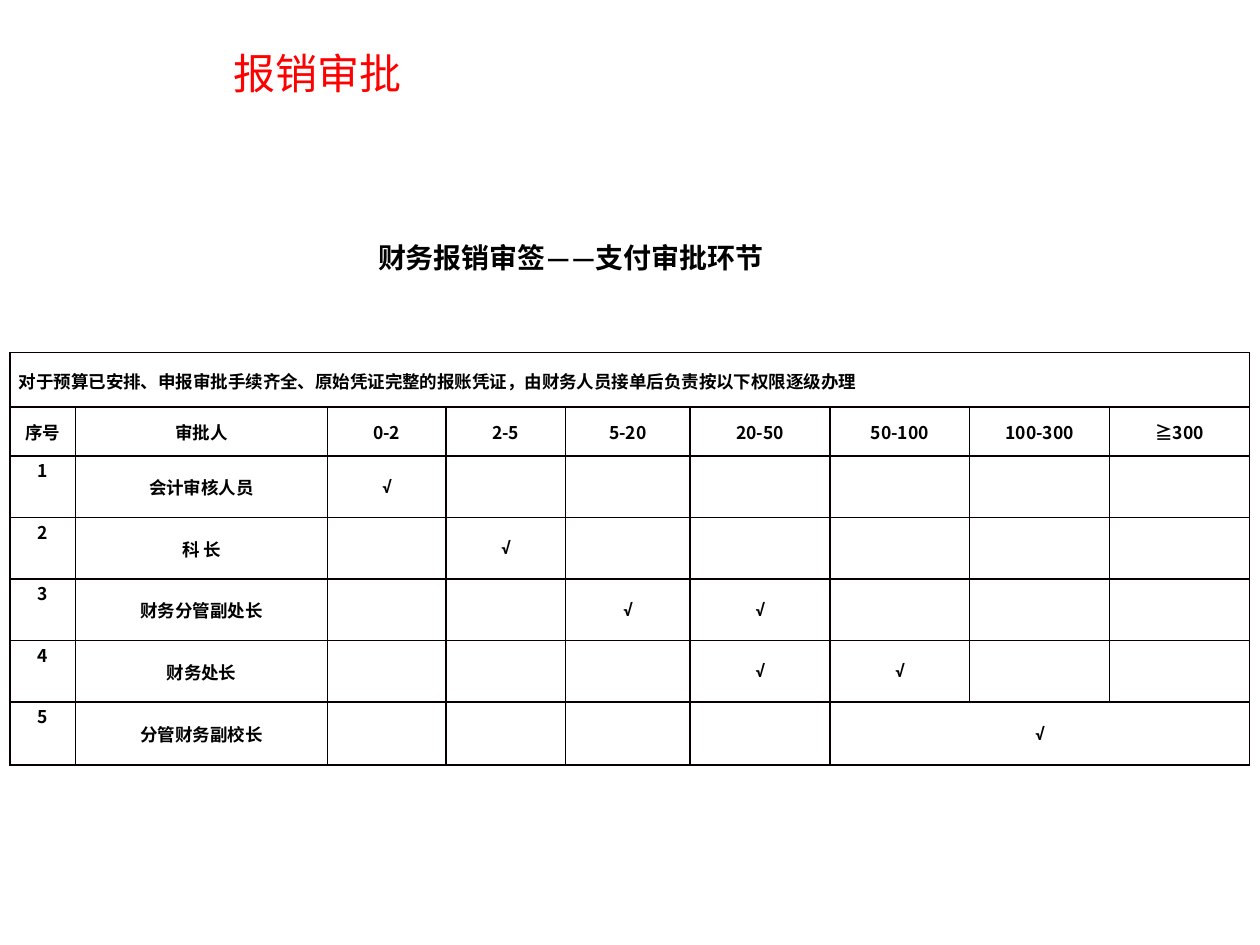
"""Build the reimbursement approval slide with its authority table."""
from lxml.etree import SubElement
from pptx import Presentation
from pptx.dml.color import RGBColor
from pptx.enum.text import MSO_ANCHOR as Anchor, MSO_AUTO_SIZE as AutoSize, PP_ALIGN as Align
from pptx.oxml.ns import qn
from pptx.util import Cm, Pt

SANS = "Noto Sans CJK SC"
LATIN = "Calibri"
TICK = "√"


def color(value):
    """Turn a hex string into a colour."""
    return RGBColor.from_string(value)


def write(frame, text, size, face, bold, align, ink="000000"):
    """Put one formatted paragraph into a text frame."""
    para = frame.paragraphs[0]
    para.text = text
    para.alignment = align
    para.font.size = Pt(size)
    para.font.bold = bold
    para.font.name = face
    para.font.color.rgb = color(ink)
    SubElement(para._p.find(".//" + qn("a:defRPr")), qn("a:ea"), typeface=face)


deck = Presentation()
deck.slide_width, deck.slide_height = Cm(25.4), Cm(19.05)
page = deck.slides.add_slide(deck.slide_layouts[5])

title = page.shapes.title
title.left, title.top, title.width, title.height = Cm(4.45), Cm(0.84), Cm(13.97), Cm(1.27)
title.text_frame.vertical_anchor = Anchor.TOP
title.text_frame.auto_size = AutoSize.SHAPE_TO_FIT_TEXT
write(title.text_frame, "报销审批", 24, SANS, False, Align.LEFT, "FF0000")

subtitle = page.shapes.add_textbox(Cm(4.45), Cm(4.72), Cm(14.12), Cm(0.94))
subtitle.text_frame.word_wrap = True
subtitle.text_frame.auto_size = AutoSize.SHAPE_TO_FIT_TEXT
write(subtitle.text_frame, "财务报销审签——支付审批环节", 16, LATIN, True, Align.CENTER)

rule = "对于预算已安排、申报审批手续齐全、原始凭证完整的报账凭证，由财务人员接单后负责按以下权限逐级办理"
header = ["序号", "审批人", "0-2", "2-5", "5-20", "20-50", "50-100", "100-300", "≧300"]
approvers = [
    ("会计审核人员", [2]),
    ("科 长", [3]),
    ("财务分管副处长", [4, 5]),
    ("财务处长", [5, 6]),
    ("分管财务副校长", [6]),
]
rows = [[rule] + [""] * 8, header]
for number, (approver, ticks) in enumerate(approvers, 1):
    rows.append([str(number), approver] + [TICK if column in ticks else "" for column in range(2, 9)])

widths = [1.32, 5.08, 2.39, 2.41, 2.51] + [2.82] * 4
heights = [1.09, 0.99] + [1.24] * 4 + [1.27]
table = page.shapes.add_table(
    len(rows), len(widths), Cm(0.2), Cm(7.11), Cm(sum(widths)), Cm(sum(heights))
).table
for column, width in zip(table.columns, widths):
    column.width = Cm(width)
for row, height in zip(table.rows, heights):
    row.height = Cm(height)
table.cell(0, 0).merge(table.cell(0, 8))
table.cell(6, 6).merge(table.cell(6, 8))

for row_index, row in enumerate(rows):
    for column_index, text in enumerate(row):
        cell = table.cell(row_index, column_index)
        is_number = row_index > 1 and column_index == 0
        cell.vertical_anchor = Anchor.TOP if is_number else Anchor.MIDDLE
        cell.margin_left = cell.margin_right = Cm(0.18)
        cell.margin_top, cell.margin_bottom = Cm(0.03), 0
        for side in ("lnL", "lnR", "lnT", "lnB"):
            line = SubElement(cell._tc.get_or_add_tcPr(), qn(f"a:{side}"), w=str(Pt(1)))
            SubElement(SubElement(line, qn("a:solidFill")), qn("a:srgbClr"), val="080000")
        cell.fill.background()
        if text:
            face = LATIN if text == TICK else SANS
            align = Align.CENTER if row_index else Align.LEFT
            write(cell.text_frame, text, 10, face, True, align)

deck.save("out.pptx")
